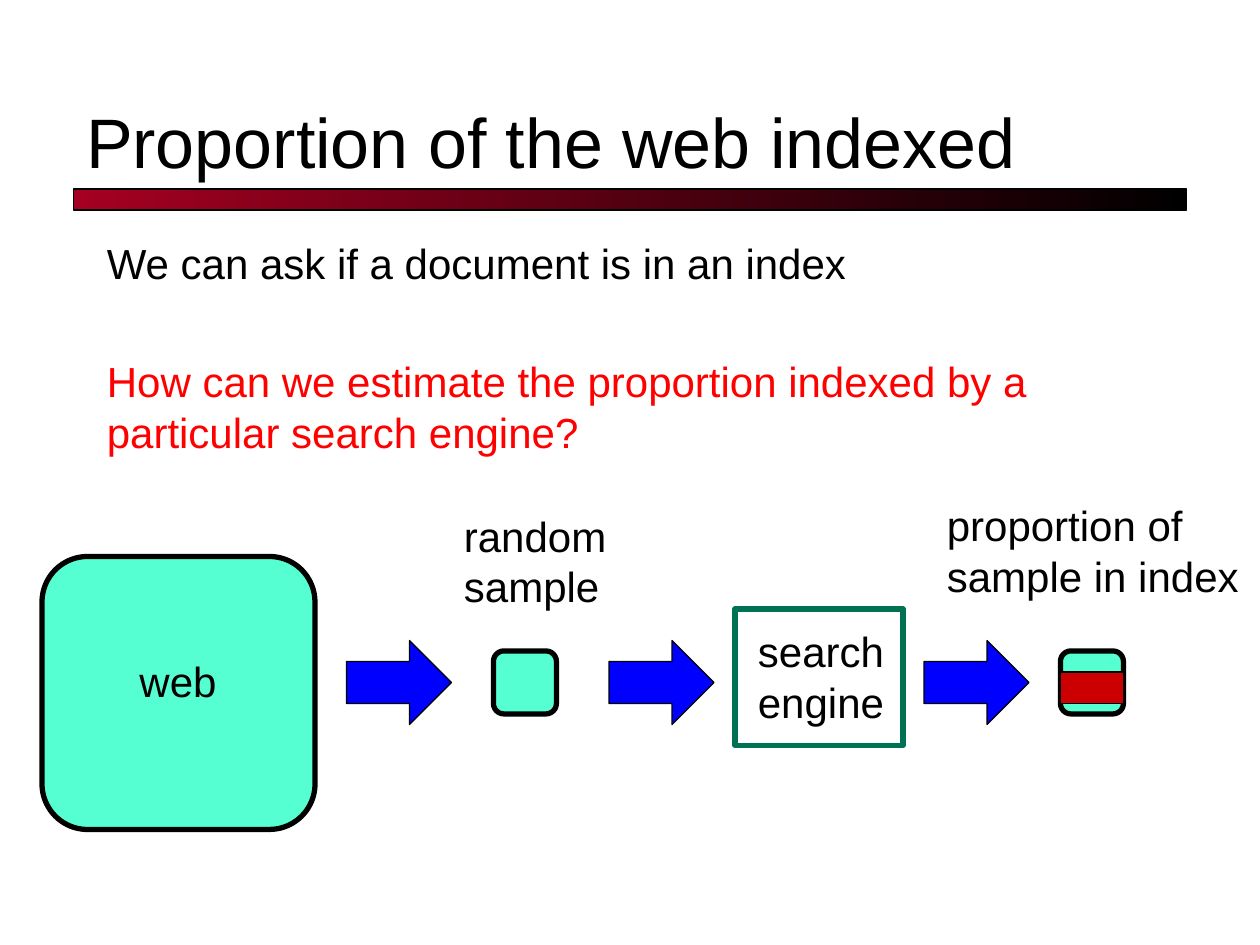
from dataclasses import dataclass

from pptx import Presentation
from pptx.dml.color import RGBColor
from pptx.enum.shapes import MSO_SHAPE
from pptx.enum.text import MSO_ANCHOR, MSO_AUTO_SIZE, PP_ALIGN
from pptx.util import Inches, Pt

COLUMNS, ROWS = 120, 90
SLIDE_WIDTH, SLIDE_HEIGHT = Inches(10), Inches(7.5)


@dataclass(frozen=True)
class Theme:
    font: str = "Arial"
    title_size: int = 40
    text_size: int = 24
    thin: float = 0.75
    thick: float = 3
    ink: str = "000000"
    question: str = "FF0000"
    bar: str = "A50021"
    pages: str = "56FFD2"
    arrow: str = "0000FF"
    engine: str = "007254"
    indexed: str = "CC0000"


THEME = Theme()


def grid(column, row, width, height):
    return (
        round(SLIDE_WIDTH * column / COLUMNS),
        round(SLIDE_HEIGHT * row / ROWS),
        round(SLIDE_WIDTH * width / COLUMNS),
        round(SLIDE_HEIGHT * height / ROWS),
    )


def write(paragraph, text, *, size=THEME.text_size, color=THEME.ink, space_before=0):
    paragraph.text = text
    paragraph.alignment = PP_ALIGN.LEFT
    paragraph.space_before = Pt(space_before)
    for run in paragraph.runs:
        run.font.name = THEME.font
        run.font.size = Pt(size)
        run.font.color.rgb = RGBColor.from_string(color)


def add_title(slide, text):
    title = slide.shapes.title
    title.left, title.top, title.width, title.height = grid(7, 5, 106, 13)
    frame = title.text_frame
    frame.auto_size = MSO_AUTO_SIZE.NONE
    frame.vertical_anchor = MSO_ANCHOR.BOTTOM
    write(frame.paragraphs[0], text, size=THEME.title_size)


def add_label(shapes, cells, *lines, wrap=False):
    frame = shapes.add_textbox(*grid(*cells)).text_frame
    frame.word_wrap = wrap
    for index, line in enumerate(lines):
        paragraph = frame.add_paragraph() if index else frame.paragraphs[0]
        write(paragraph, line)
    return frame


def add_block(shapes, kind, cells, fill=None, line=THEME.ink, weight=THEME.thin):
    block = shapes.add_shape(kind, *grid(*cells))
    block.shadow.inherit = False
    if fill:
        block.fill.solid()
        block.fill.fore_color.rgb = RGBColor.from_string(fill)
    else:
        block.fill.background()
    block.line.color.rgb = RGBColor.from_string(line)
    block.line.width = Pt(weight)
    return block


def add_title_bar(slide):
    bar = add_block(slide.shapes, MSO_SHAPE.RECTANGLE, (7, 18, 106, 2))
    bar.fill.gradient()
    bar.fill.gradient_angle = 0
    for stop, color, position in zip(bar.fill.gradient_stops, (THEME.bar, THEME.ink), (0, 1)):
        stop.color.rgb = RGBColor.from_string(color)
        stop.position = position


def add_body(slide):
    frame = add_label(slide.shapes, (9, 22, 102, 21),
                      "We can ask if a document is in an index", wrap=True)
    write(frame.add_paragraph(),
          "How can we estimate the proportion indexed by a particular search engine?",
          color=THEME.question, space_before=39)


def add_pages(shapes, column, row, side):
    add_block(shapes, MSO_SHAPE.ROUNDED_RECTANGLE, (column, row, side, side),
              THEME.pages, weight=THEME.thick)


def add_arrow(shapes, column):
    add_block(shapes, MSO_SHAPE.RIGHT_ARROW, (column, 61, 10, 8), THEME.arrow)


def add_sampling(slide):
    shapes = slide.shapes.add_group_shape().shapes
    add_pages(shapes, 4, 53, 26)
    add_label(shapes, (12.1, 61.8, 10, 6), "web")
    add_arrow(shapes, 33)
    add_pages(shapes, 47, 62, 6)
    add_label(shapes, (43, 48, 16, 11), "random", "sample")


def add_lookup(slide):
    shapes = slide.shapes.add_group_shape().shapes
    add_arrow(shapes, 58)
    add_block(shapes, MSO_SHAPE.RECTANGLE, (70, 58, 16, 13),
              line=THEME.engine, weight=THEME.thick)
    add_label(shapes, (71, 59, 14.5, 11), "search\vengine")
    add_arrow(shapes, 88)
    add_pages(shapes, 101, 62, 6)
    add_block(shapes, MSO_SHAPE.RECTANGLE, (101, 64, 6, 3), THEME.indexed)
    add_label(shapes, (89, 47, 31, 11), "proportion of", "sample in index", wrap=True)


def main():
    presentation = Presentation()
    presentation.slide_width = SLIDE_WIDTH
    presentation.slide_height = SLIDE_HEIGHT
    slide = presentation.slides.add_slide(presentation.slide_layouts.get_by_name("Title Only"))
    add_title_bar(slide)
    add_title(slide, "Proportion of the web indexed")
    add_body(slide)
    add_sampling(slide)
    add_lookup(slide)
    presentation.save("out.pptx")


if __name__ == "__main__":
    main()
